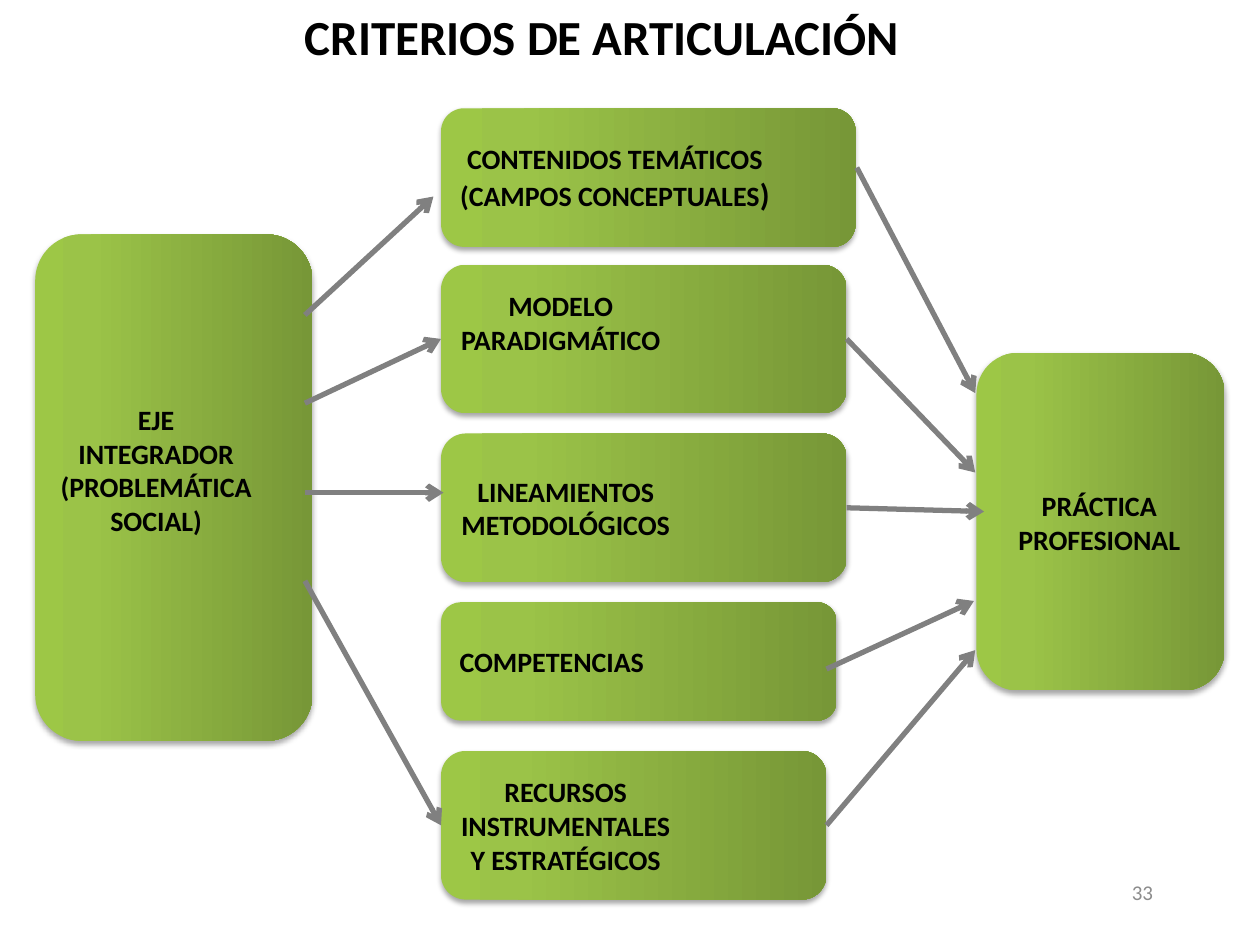
from copy import deepcopy

from lxml import etree
from pptx import Presentation
from pptx.dml.color import RGBColor
from pptx.enum.shapes import MSO_CONNECTOR, MSO_SHAPE
from pptx.enum.text import MSO_ANCHOR, PP_ALIGN
from pptx.oxml.ns import qn
from pptx.util import Inches, Pt

ROUNDED = MSO_SHAPE.ROUNDED_RECTANGLE
STRAIGHT = MSO_CONNECTOR.STRAIGHT
LEFT, CENTER, RIGHT = PP_ALIGN.LEFT, PP_ALIGN.CENTER, PP_ALIGN.RIGHT
TOP, MIDDLE = MSO_ANCHOR.TOP, MSO_ANCHOR.MIDDLE
LEFT_SIDE, RIGHT_SIDE = 1, 3


def color(value):
    return RGBColor.from_string(value)


class DiagramSlide:
    font = "Calibri"
    gradient = [(0, "9DC746"), (0.2, "9BC348"), (1, "779737")]
    arrow_color = "808080"

    def __init__(self, slide):
        self.slide = slide

    def add_lines(self, frame, lines, size=16, ink="000000", bold=True, align=CENTER):
        """Each line is a list of (text, size) runs or a plain string."""
        for index, line in enumerate(lines):
            paragraph = frame.paragraphs[0] if index == 0 else frame.add_paragraph()
            paragraph.alignment = align
            runs = [(line, size)] if isinstance(line, str) else line
            for text, points in runs:
                run = paragraph.add_run()
                run.text = text
                run.font.name = self.font
                run.font.size = Pt(points)
                run.font.bold = bold
                run.font.color.rgb = color(ink)

    def text(self, left, top, width, height, lines, anchor=TOP, wrap=False, **style):
        box = self.slide.shapes.add_textbox(
            Inches(left), Inches(top), Inches(width), Inches(height))
        frame = box.text_frame
        frame.word_wrap = wrap
        frame.vertical_anchor = anchor
        self.add_lines(frame, lines, **style)

    def box(self, left, top, width, height, lines=(), text_center=None, lift=0):
        """Green box whose lines are centred on text_center and raised by lift."""
        shape = self.slide.shapes.add_shape(
            ROUNDED, Inches(left), Inches(top), Inches(width), Inches(height))
        shape.adjustments[0] = 0.167
        shape.line.fill.background()
        self.paint(shape)
        self.add_shadow(shape)
        if lines:
            frame = shape.text_frame
            frame.word_wrap = False
            frame.vertical_anchor = MIDDLE
            frame.margin_left = frame.margin_top = 0
            frame.margin_right = Inches(width - 2 * (text_center - left))
            frame.margin_bottom = Inches(2 * lift)
            self.add_lines(frame, lines)
        return shape

    def paint(self, shape):
        fill = shape.fill
        fill.gradient()
        fill.gradient_angle = 0
        stop_list = shape._element.spPr.find(qn("a:gradFill")).find(qn("a:gsLst"))
        stop_list.insert(1, deepcopy(stop_list[0]))
        for stop, (position, value) in zip(fill.gradient_stops, self.gradient):
            stop.position = position
            stop.color.rgb = color(value)

    def add_shadow(self, shape):
        shape.shadow.inherit = False
        effects = shape._element.spPr.find(qn("a:effectLst"))
        shadow = etree.SubElement(
            effects, qn("a:outerShdw"), blurRad=str(Pt(3.1)), dist=str(Pt(1.8)),
            dir="5400000", rotWithShape="0")
        shade = etree.SubElement(shadow, qn("a:srgbClr"), val="000000")
        etree.SubElement(shade, qn("a:alpha"), val="35000")

    def arrow(self, start, end, source=None, target=None):
        connector = self.slide.shapes.add_connector(
            STRAIGHT, *(Inches(value) for value in start + end))
        if source is not None:
            connector.begin_connect(source, RIGHT_SIDE)
        if target is not None:
            connector.end_connect(target, LEFT_SIDE)
        connector.line.color.rgb = color(self.arrow_color)
        connector.line.width = Pt(3)
        line = connector._element.spPr.find(qn("a:ln"))
        etree.SubElement(line, qn("a:tailEnd"), type="arrow")
        etree.SubElement(connector._element.spPr, qn("a:effectLst"))


def main():
    presentation = Presentation()
    presentation.slide_width = Inches(10)
    presentation.slide_height = Inches(7.5)
    diagram = DiagramSlide(presentation.slides.add_slide(presentation.slide_layouts[6]))

    # Title and page number
    diagram.text(2.32, 0, 6.23, 0.57, ["CRITERIOS DE ARTICULACIÓN"], size=28, align=LEFT)
    diagram.text(7.17, 6.83, 2.08, 0.5, ["33"], anchor=MIDDLE, wrap=True,
                 size=12, ink="8C8C8C", bold=False, align=RIGHT)

    # Integrating axis
    diagram.box(0.28, 1.86, 2.2, 4.02,
                ["EJE", "INTEGRADOR", "(PROBLEMÁTICA", "SOCIAL)"], 1.24, lift=0.14)

    # Criteria: top, width, height, text centre, lift, lines
    criteria = [
        (0.86, 3.29, 1.1, 4.88, 0,
         ["CONTENIDOS TEMÁTICOS", [("(CAMPOS CONCEPTUALES", 16), (")", 18)]]),
        (2.1, 3.22, 1.18, 4.45, 0.13, ["MODELO", "PARADIGMÁTICO"]),
        (3.44, 3.22, 1.18, 4.49, 0, ["LINEAMIENTOS", "METODOLÓGICOS"]),
        (4.78, 3.14, 0.94, 4.38, 0, ["COMPETENCIAS"]),
        (5.96, 3.06, 1.18, 4.49, 0, ["RECURSOS", "INSTRUMENTALES", "Y ESTRATÉGICOS"]),
    ]
    _, model, guidelines, _, resources = [
        diagram.box(3.5, top, width, height, lines, center, lift)
        for top, width, height, center, lift, lines in criteria]

    # Professional practice
    diagram.box(7.75, 2.8, 1.97, 2.68)
    diagram.text(7.76, 3.83, 1.93, 0.64, ["PRÁCTICA", "PROFESIONAL"])

    # Arrows from the axis to the criteria
    for start_y, end, target in [
        (2.5, (3.44, 1.56), None),
        (3.2, (3.5, 2.69), model),
        (3.91, (3.52, 3.91), None),
        (4.61, (3.5, 6.55), resources),
    ]:
        diagram.arrow((2.42, start_y), end, target=target)

    # Arrows from the criteria to the practice
    for start, end, source in [
        ((6.8, 1.33), (7.74, 3.12), None),
        ((6.72, 2.69), (7.74, 3.75), model),
        ((6.72, 4.03), (7.81, 4.06), guidelines),
        ((6.56, 5.31), (7.73, 4.77), None),
        ((6.56, 6.55), (7.74, 5.16), resources),
    ]:
        diagram.arrow(start, end, source=source)

    presentation.save("out.pptx")


if __name__ == "__main__":
    main()
